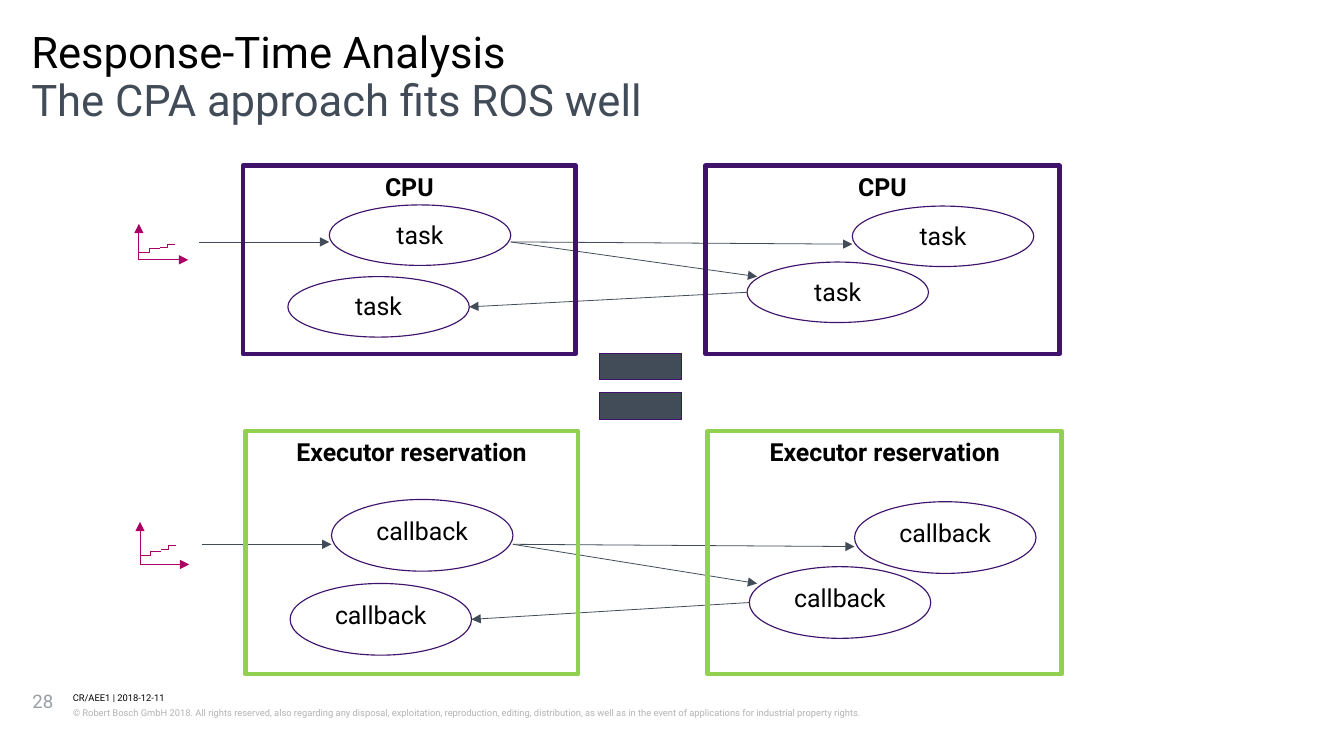
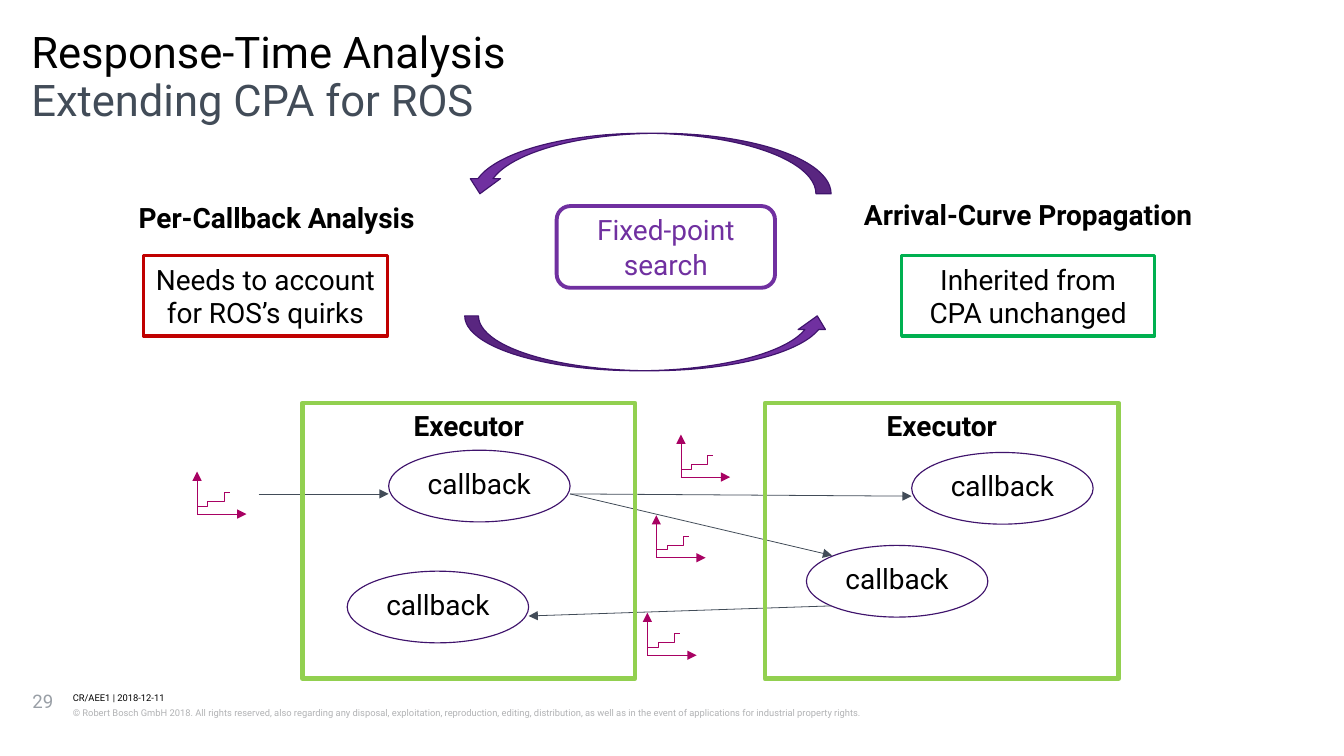
from lxml import etree
from pptx import Presentation
from pptx import util as u
from pptx.dml.color import RGBColor
from pptx.enum import shapes, text
from pptx.oxml.ns import qn

FONT = "Roboto"
BLACK, WHITE, SLATE, PLUM = "000000", "FFFFFF", "424C58", "3F136C"
MAGENTA, PURPLE, LIME = "A80163", "7030A0", "92D050"
GREEN, RED, GREY, PALE = "00B050", "C00000", "999FA6", "B2B3B5"
SHAPE, LINE, ALIGN = shapes.MSO_SHAPE, shapes.MSO_CONNECTOR, text.PP_ALIGN
LEFT, CENTER = ALIGN.LEFT, ALIGN.CENTER
COPYRIGHT = (
    "© Robert Bosch GmbH 2018. All rights reserved, also regarding any disposal, "
    "exploitation, reproduction, editing, distribution, as well as in the event of "
    "applications for industrial property rights."
)
NODE_WIDTH = 1.62
NODE_OFFSETS = (0.4, 0.77, 4.5, 5.44)
FRAMES = ((0, 2.97), (4.13, 3.16))


def rgb(value):
    """Turn a hex string into a colour."""
    return RGBColor.from_string(value)


class Painter:
    """Holds the deck style and draws on the current page."""

    def __init__(self):
        """Start an empty deck of the right size."""
        self.deck = Presentation()
        self.deck.slide_width = u.Inches(12)
        self.deck.slide_height = u.Inches(6.75)
        self.page = None

    def new_page(self, number, subtitle):
        """Add a page with its two-line title and footer."""
        self.page = self.deck.slides.add_slide(self.deck.slide_layouts[6])
        self.label((0.65, 6.17, 10.01, 0.12), "CR/AEE1 | 2018-12-11", 6, spacing=1.07)
        self.label((0.65, 6.29, 10.01, 0.24), COPYRIGHT, 6, PALE, spacing=1.2)
        self.label((0.28, 0.71, 11.43, 0.43), subtitle, 28, SLATE, spacing=0.89)
        self.label((0.28, 0.28, 11.43, 0.43), "Response-Time Analysis", 28, spacing=0.89)
        self.label((0.29, 6.16, 0.32, 0.45), str(number), 12, GREY)

    def set_words(self, box, words, size, color=BLACK, bold=False, align=CENTER,
                  spacing=1.0, inset=True, anchor=text.MSO_ANCHOR.TOP):
        """Set one styled paragraph in a box."""
        frame = box.text_frame
        frame.word_wrap = True
        frame.vertical_anchor = anchor
        if not inset:
            frame.margin_left = frame.margin_right = 0
            frame.margin_top = frame.margin_bottom = 0
        para = frame.paragraphs[0]
        para.text = words
        para.alignment = align
        para.line_spacing = spacing
        para.font.name = FONT
        para.font.size = u.Pt(size)
        para.font.bold = bold
        para.font.color.rgb = rgb(color)

    def label(self, area, words, size, color=BLACK, bold=False, align=LEFT, spacing=1.0):
        """Add a text box without margins."""
        box = self.page.shapes.add_textbox(*map(u.Inches, area))
        self.set_words(box, words, size, color, bold, align, spacing, inset=False)

    def shape(self, kind, area, line, width=0.75, fill=None):
        """Add an outlined preset shape, filled if a fill is given."""
        box = self.page.shapes.add_shape(kind, *map(u.Inches, area))
        box.shadow.inherit = False
        if fill:
            box.fill.solid()
            box.fill.fore_color.rgb = rgb(fill)
        else:
            box.fill.background()
        box.line.color.rgb = rgb(line)
        box.line.width = u.Pt(width)
        return box

    def wire(self, start, end, color=SLATE, kind=LINE.STRAIGHT):
        """Join two points; straight wires end in an arrowhead."""
        wire = self.page.shapes.add_connector(kind, *map(u.Inches, (*start, *end)))
        wire.line.color.rgb = rgb(color)
        wire.line.width = u.Pt(0.5)
        outline = wire._element.spPr
        if kind == LINE.STRAIGHT:
            etree.SubElement(outline.find(qn("a:ln")), qn("a:tailEnd"), type="triangle")
        etree.SubElement(outline, qn("a:effectLst"))

    def arrival_curve(self, left, base, height=0.38, run=0.1,
                      rises=((0.07, 0.11), (0.11, 0.19))):
        """Draw two axes and a curve of two steps."""
        for tip in ((left, base - height), (left + 0.44, base)):
            self.wire((left, base), tip, MAGENTA)
        spans = ((left, left + 0.19), (left + 0.19, left + 0.19 + run))
        for (begin, end), (low, high) in zip(spans, rises):
            self.wire((begin, base - low), (end, base - high), MAGENTA, LINE.ELBOW)

    def network(self, left, top, height, color, title, node, size, node_height,
                node_tops, wire_y, fork, back):
        """Draw two framed groups of nodes and the wires between them."""
        for offset, node_top in zip(NODE_OFFSETS, node_tops):
            box = self.shape(SHAPE.OVAL, (left + offset, node_top, NODE_WIDTH, node_height), PLUM)
            self.set_words(box, node, size)
        exit_point = (left + 2.39, wire_y)
        (fork_x, fork_y), (back_x, back_y, back_end) = fork, back
        self.wire(exit_point, (left + fork_x, fork_y))
        self.wire(exit_point, (left + NODE_OFFSETS[3], wire_y + 0.02))
        self.wire((left + back_x, back_y), (left + 2.02, back_end))
        self.wire((left - 0.39, wire_y), (left + NODE_OFFSETS[1], wire_y))
        for offset, width in FRAMES:
            box = self.shape(SHAPE.RECTANGLE, (left + offset, top, width, height), color, 3)
            self.set_words(box, title, size, bold=True)

    def note(self, area, words, color):
        """Add an outlined remark."""
        box = self.shape(SHAPE.RECTANGLE, area, color, 2)
        self.set_words(box, words, 18, anchor=text.MSO_ANCHOR.MIDDLE)


def comparison_page(painter):
    """Show that tasks on CPUs match callbacks in executors."""
    painter.new_page(28, "The CPA approach fits ROS well")
    painter.network(2.17, 1.48, 1.68, PLUM, "CPU", "task", 16, 0.54,
                    (2.47, 1.83, 2.34, 1.84), 2.16, (4.59, 2.47), (4.5, 2.61, 2.74))
    painter.arrival_curve(1.24, 2.32, 0.32, 0.13, ((0.07, 0.1), (0.11, 0.14)))
    painter.network(2.19, 3.85, 2.17, LIME, "Executor reservation", "callback", 16, 0.64,
                    (5.21, 4.46, 5.06, 4.48), 4.86, (4.57, 5.21), (4.5, 5.38, 5.53))
    painter.arrival_curve(1.25, 5.04, 0.38, 0.13, ((0.08, 0.12), (0.13, 0.17)))
    painter.shape(SHAPE.MATH_EQUAL, (5.22, 2.95, 1, 1), PLUM, fill=SLATE)


def extension_page(painter):
    """Show the fixed-point search between the two analyses."""
    painter.new_page(29, "Extending CPA for ROS")
    painter.label((0.28, 1.77, 4.38, 1.04), "Per-Callback Analysis", 18,
                  bold=True, align=CENTER, spacing=1.07)
    painter.label((7.17, 1.74, 4.02, 1), "Arrival-Curve Propagation", 18,
                  bold=True, align=CENTER, spacing=u.Pt(23))
    painter.network(2.7, 3.6, 2.46, LIME, "Executor", "callback", 18, 0.64,
                    (5.1, 4.02, 4.87, 4.04), 4.41, (4.73, 4.96), (4.72, 5.41, 5.5))
    for left, base in ((1.76, 4.59), (6.08, 4.26), (5.86, 4.98), (5.78, 5.85)):
        painter.arrival_curve(left, base)
    search = painter.shape(SHAPE.ROUNDED_RECTANGLE, (4.97, 1.84, 1.95, 0.73),
                           PURPLE, 2.5, WHITE)
    painter.set_words(search, "Fixed-point search", 18, PURPLE, spacing=u.Pt(23), inset=False)
    for top, height, turn in ((2.82, 0.49, 0), (1.19, 0.54, 180)):
        arrow = painter.shape(SHAPE.CURVED_UP_ARROW, (4.15, top, 3.27, height),
                              PLUM, fill=PURPLE)
        arrow.rotation = turn
    painter.note((8.05, 2.28, 2.26, 0.72), "Inherited from CPA unchanged", GREEN)
    painter.note((1.28, 2.28, 2.18, 0.72), "Needs to account for ROS’s quirks", RED)


def main():
    """Build and save the deck."""
    painter = Painter()
    comparison_page(painter)
    extension_page(painter)
    painter.deck.save("out.pptx")


if __name__ == "__main__":
    main()
